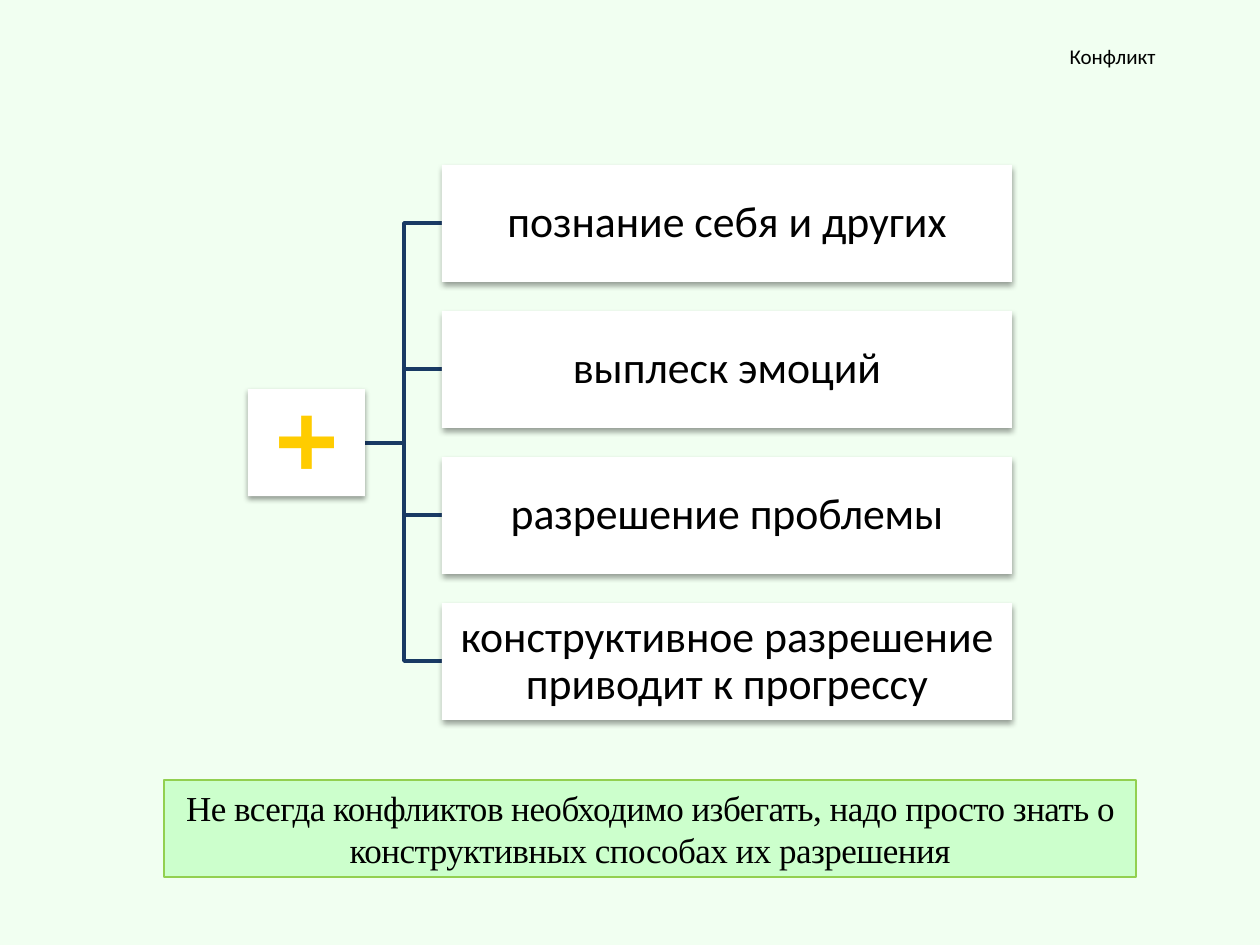
from lxml import etree
from pptx import Presentation
from pptx import util as u
from pptx.dml.color import RGBColor
from pptx.enum import shapes, text

SCALE = 914400 / 126
NS = "http://schemas.openxmlformats.org/drawingml/2006/main"
COLORS = {
    "background": "F1FFF1",
    "branch": "193A64",
    "card": "FFFFFF",
    "plus": "FFCC00",
    "text": "000000",
    "advice": "CCFFCC",
    "advice_edge": "92D050",
}
SHADOW = (
    f'<a:effectLst xmlns:a="{NS}"><a:outerShdw blurRad="40000" dist="20000" dir="5400000" '
    'rotWithShape="0"><a:srgbClr val="000000"><a:alpha val="38000"/></a:srgbClr>'
    "</a:outerShdw></a:effectLst>"
)


def add_card(left, top, width, height, fill):
    card = slide.shapes.add_shape(
        shapes.MSO_SHAPE.RECTANGLE, *(u.Emu(round(v * SCALE)) for v in (left, top, width, height))
    )
    card.shadow.inherit = False
    card.fill.solid()
    card.fill.fore_color.rgb = RGBColor.from_string(COLORS[fill])
    card.line.fill.background()
    return card


def write(target, words, size, align, font="Calibri", color="text", bold=False, spacing=1.0, frame=None):
    body = target.text_frame
    layout = {"word_wrap": True, "vertical_anchor": text.MSO_ANCHOR.MIDDLE,
              "auto_size": text.MSO_AUTO_SIZE.NONE}
    for name, value in (layout | (frame or {})).items():
        setattr(body, name, value)
    paragraph = body.paragraphs[0]
    paragraph.alignment, paragraph.line_spacing = align, spacing
    run = paragraph.add_run()
    run.text = words
    for name, value in {"name": font, "size": u.Pt(size), "bold": bold}.items():
        setattr(run.font, name, value)
    run.font.color.rgb = RGBColor.from_string(COLORS[color])
    return run


def_margins = ("margin_left", "margin_right", "margin_top", "margin_bottom")
CENTER = text.PP_ALIGN.CENTER

deck = Presentation()
deck.slide_width, deck.slide_height = u.Inches(10), u.Inches(7.5)
slide = deck.slides.add_slide(deck.slide_layouts[5])
slide.background.fill.solid()
slide.background.fill.fore_color.rgb = RGBColor.from_string(COLORS["background"])

topic = slide.shapes.title
for name, value in {"left": 1057, "top": 37, "width": 112, "height": 38}.items():
    setattr(topic, name, u.Emu(round(value * SCALE)))
write(topic, "Конфликт", 12, text.PP_ALIGN.LEFT,
      frame={"word_wrap": False, "vertical_anchor": text.MSO_ANCHOR.TOP})

benefits = [
    "познание себя и других",
    "выплеск эмоций",
    "разрешение проблемы",
    "конструктивное разрешение приводит к прогрессу",
]
benefit_left, first_top, pitch, benefit_height = 442, 165, 146, 117
root_right, trunk, root_middle = 365, 404, 443
tops = [first_top + pitch * i for i in range(len(benefits))]

for top in reversed(tops):
    middle = top + benefit_height // 2
    outline = slide.shapes.build_freeform(root_right, root_middle, scale=SCALE)
    outline.add_line_segments(
        [(trunk, root_middle), (trunk, middle), (benefit_left, middle)], close=False
    )
    branch = outline.convert_to_shape()
    branch.shadow.inherit = False
    branch.fill.background()
    branch.line.width = u.Pt(2)
    branch.line.color.rgb = RGBColor.from_string(COLORS["branch"])

plus = add_card(253, 384, 107, 117, "card")
plus.rotation = 270
write(plus, "+", 66, CENTER, color="plus", bold=True, spacing=0.9,
      frame=dict.fromkeys(def_margins, u.Inches(0.05)))

cards = [plus]
for top, words in zip(tops, benefits):
    benefit = add_card(benefit_left, top, 570, benefit_height, "card")
    write(benefit, words, 25, CENTER, spacing=0.9,
          frame=dict.fromkeys(def_margins, u.Inches(0.02)))
    cards.append(benefit)

for card in cards:
    properties = card._element.spPr
    properties.replace(properties.find(f"{{{NS}}}effectLst"), etree.fromstring(SHADOW))

advice = add_card(164, 780, 972, 97, "advice")
advice.line.width = u.Pt(0.75)
advice.line.color.rgb = RGBColor.from_string(COLORS["advice_edge"])
advice_run = write(
    advice,
    "Не всегда конфликтов необходимо избегать, надо просто знать о "
    "конструктивных способах их разрешения",
    20, CENTER, font="Times New Roman",
    frame={"vertical_anchor": text.MSO_ANCHOR.TOP},
)
advice_run.font._element.set("spc", "-30")

deck.save("out.pptx")
